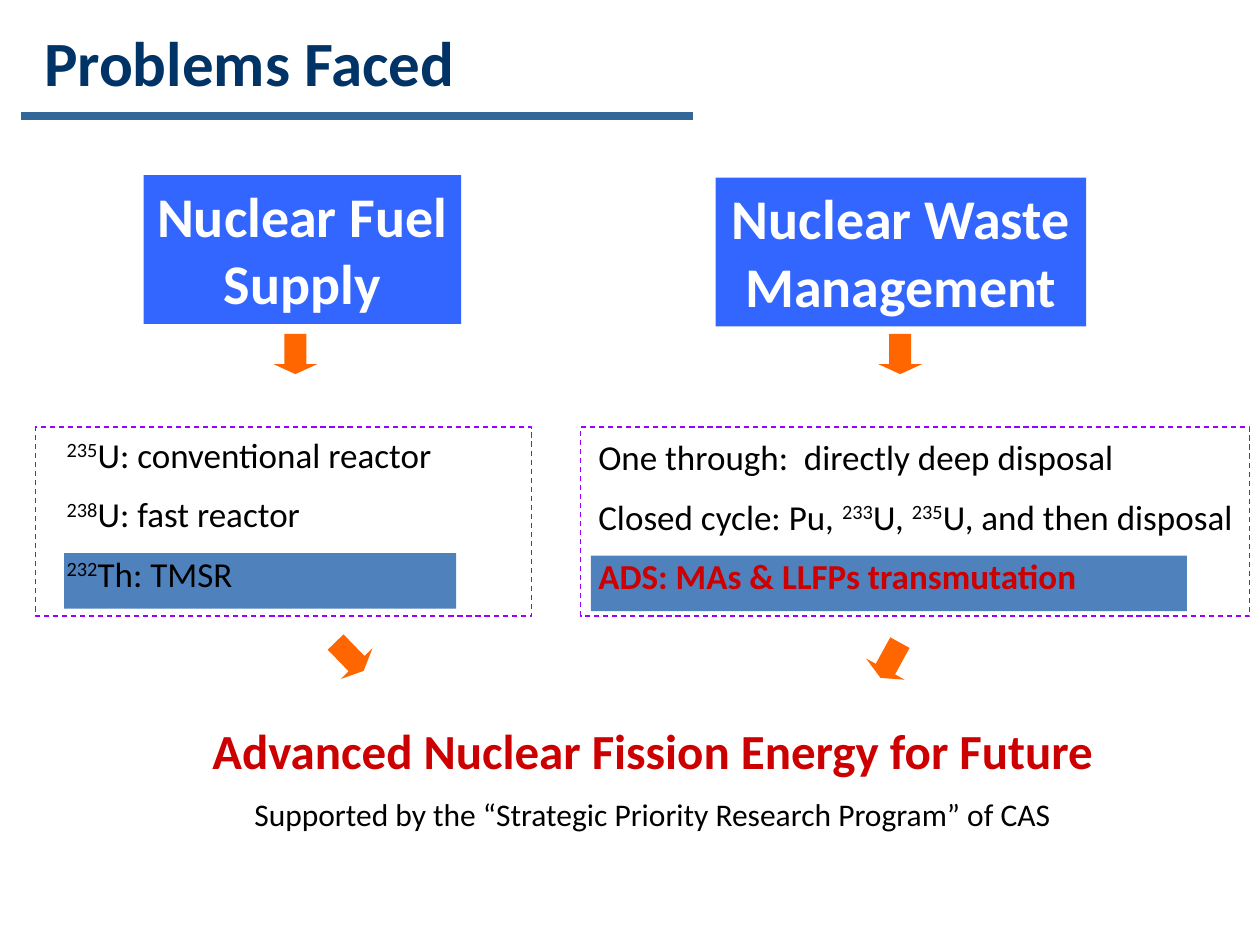
from dataclasses import dataclass

import pptx
import pptx.util
from lxml import etree
from pptx.dml.color import RGBColor
from pptx.enum.dml import MSO_LINE
from pptx.enum.shapes import MSO_CONNECTOR, MSO_SHAPE
from pptx.enum.text import MSO_ANCHOR, MSO_AUTO_SIZE, PP_ALIGN
from pptx.oxml.ns import qn

Pt = pptx.util.Pt


@dataclass(frozen=True)
class Theme:
    font: str = "Calibri"
    title_size: int = 36
    heading_size: int = 32
    conclusion_size: int = 28
    body_size: int = 20
    note_size: int = 18
    navy: str = "003366"
    rule: str = "336699"
    heading_fill: str = "3366FF"
    highlight: str = "4F81BD"
    arrow: str = "FF6600"
    frame: str = "9900FF"
    red: str = "CC0000"
    black: str = "000000"
    white: str = "FFFFFF"


THEME = Theme()


def color(name):
    return RGBColor.from_string(getattr(THEME, name))


def write_text(shape, text, size, ink="black", bold=False, align=PP_ALIGN.LEFT):
    """Add one paragraph; pieces between ^ marks are superscript."""
    frame = shape.text_frame
    paragraph = frame.paragraphs[0]
    if paragraph.runs:
        paragraph = frame.add_paragraph()
        paragraph.space_before = Pt(size / 2)
    paragraph.alignment = align
    for index, piece in enumerate(text.split("^")):
        if not piece:
            continue
        run = paragraph.add_run()
        run.text = piece
        run.font.name = THEME.font
        run.font.size = Pt(size)
        run.font.bold = bold
        run.font.color.rgb = color(ink)
        if index % 2:
            run.font._element.set("baseline", "30000")


def add_block(slide, bounds, fill=None, kind=MSO_SHAPE.RECTANGLE):
    """Add a preset shape without outline; fill=None leaves it hollow."""
    shape = slide.shapes.add_shape(kind, *map(Pt, bounds))
    shape.shadow.inherit = False
    shape.line.fill.background()
    if fill:
        shape.fill.solid()
        shape.fill.fore_color.rgb = color(fill)
    else:
        shape.fill.background()
    return shape


def add_title(slide, text):
    title = slide.shapes.title
    title.left, title.top, title.width, title.height = map(Pt, (18, 0, 600.5, 69.8))
    title.text_frame.auto_size = MSO_AUTO_SIZE.NONE
    title.text_frame.vertical_anchor = MSO_ANCHOR.MIDDLE
    write_text(title, text, THEME.title_size, ink="navy", bold=True)


def add_rule(slide, left, right, y):
    rule = slide.shapes.add_connector(
        MSO_CONNECTOR.STRAIGHT, Pt(left), Pt(y), Pt(right), Pt(y))
    rule.line.color.rgb = color("rule")
    rule.line.width = Pt(4.5)
    etree.SubElement(rule._element.spPr, qn("a:effectLst"))


def add_heading(slide, bounds, text):
    heading = add_block(slide, bounds, "heading_fill")
    frame = heading.text_frame
    frame.word_wrap = True
    frame.margin_left = frame.margin_right = Pt(5)
    frame.vertical_anchor = MSO_ANCHOR.TOP
    write_text(heading, text, THEME.heading_size, ink="white", bold=True,
               align=PP_ALIGN.CENTER)


def add_text_box(slide, bounds):
    box = slide.shapes.add_textbox(*map(Pt, bounds))
    box.text_frame.word_wrap = True
    return box


def add_arrow(slide, left, top, rotation=0):
    arrow = add_block(slide, (left, top, 25.2, 23), "arrow", MSO_SHAPE.DOWN_ARROW)
    arrow.adjustments[1] = 0.25
    arrow.rotation = rotation


def add_dashed_frame(slide, left, width):
    frame = add_block(slide, (left, 244.1, width, 108))
    frame.line.color.rgb = color("frame")
    frame.line.width = Pt(0.75)
    frame.line.dash_style = MSO_LINE.DASH


def main():
    presentation = pptx.Presentation()
    presentation.slide_width, presentation.slide_height = Pt(720), Pt(540)
    slide = presentation.slides.add_slide(presentation.slide_layouts[5])

    add_title(slide, "Problems Faced")
    add_rule(slide, 12.2, 396, 66.2)

    add_block(slide, (337.7, 317.5, 340.6, 31.7), "highlight")
    add_block(slide, (36.7, 316.1, 223.9, 31.7), "highlight")
    add_heading(slide, (82.1, 100.1, 181.4, 85), "Nuclear Fuel Supply")
    add_heading(slide, (409, 101.5, 211.7, 85), "Nuclear Waste Management")

    fuel = add_text_box(slide, (31, 244.1, 266.4, 104.4))
    for text in ("^235^U: conventional reactor", "^238^U: fast reactor",
                 "^232^Th: TMSR"):
        write_text(fuel, text, THEME.body_size)

    waste = add_text_box(slide, (334.8, 245.5, 382.3, 104.4))
    for text in ("One through:  directly deep disposal",
                 "Closed cycle: Pu, ^233^U, ^235^U, and then disposal"):
        write_text(waste, text, THEME.body_size)
    write_text(waste, "ADS: MAs & LLFPs transmutation", THEME.body_size,
               ink="red", bold=True)

    add_dashed_frame(slide, 20.2, 283.7)
    add_dashed_frame(slide, 331.9, 382.3)

    add_arrow(slide, 156.2, 190.8)
    add_arrow(slide, 501.8, 190.8)
    add_arrow(slide, 187.2, 363.6, rotation=315.9)
    add_arrow(slide, 496.1, 365.8, rotation=28.8)

    conclusion = add_text_box(slide, (90.7, 408.2, 564.5, 73.4))
    write_text(conclusion, "Advanced Nuclear Fission Energy for Future",
               THEME.conclusion_size, ink="red", bold=True, align=PP_ALIGN.CENTER)
    write_text(conclusion,
               "Supported by the “Strategic Priority Research Program” of CAS",
               THEME.note_size, align=PP_ALIGN.CENTER)

    presentation.save("out.pptx")


if __name__ == "__main__":
    main()
